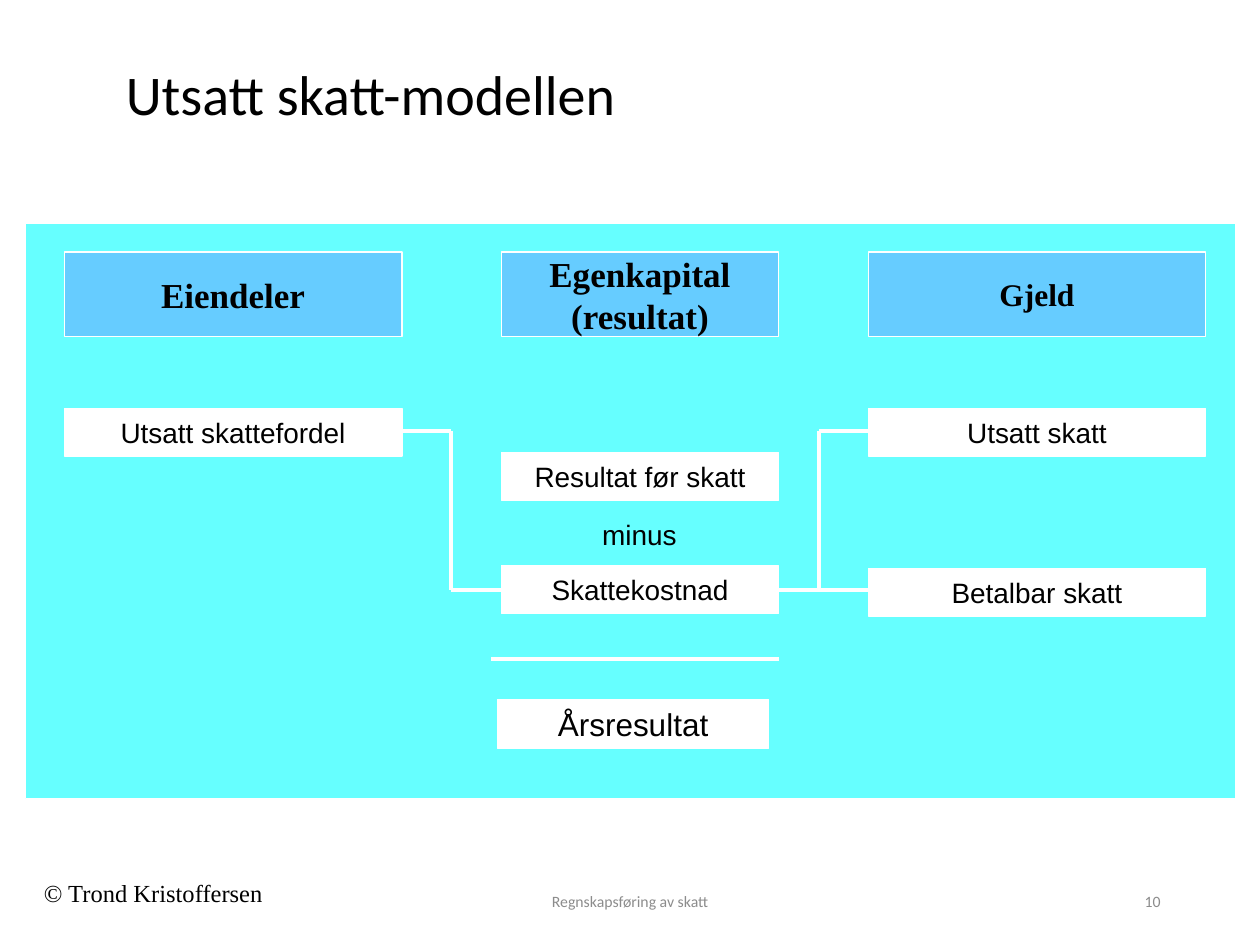
import pptx
import pptx.util
import pptx.dml.color
import pptx.enum.shapes
import pptx.enum.text
import pptx.oxml.ns
import lxml.etree

Inches = pptx.util.Inches
Align = pptx.enum.text.PP_ALIGN
Anchor = pptx.enum.text.MSO_ANCHOR


def paint(color, code):
    color.rgb = pptx.dml.color.RGBColor.from_string(code)


def write(shape, text, size, font, code="000000", align=Align.CENTER,
          anchor=Anchor.MIDDLE, bold=False, wrap=True):
    frame = shape.text_frame
    frame.word_wrap = wrap
    frame.vertical_anchor = anchor
    for i, line in enumerate(text.split("\n")):
        para = frame.add_paragraph() if i else frame.paragraphs[0]
        para.alignment = align
        run = para.add_run()
        run.text = line
        run.font.size = pptx.util.Pt(size)
        run.font.name = font
        run.font.bold = bold
        paint(run.font.color, code)


deck = pptx.Presentation()
deck.slide_width = Inches(10)
deck.slide_height = Inches(7.5)
slide = deck.slides.add_slide(deck.slide_layouts[6])
shapes = slide.shapes

serif, sans, body = "Times New Roman", "Arial", "Calibri"
black, gray, white = "000000", "8C8C8C", "FFFFFF"
cyan, blue = "66FFFF", "66CCFF"
left, mid, right = 0.51, 3.98, 6.89
wide, slim = 2.68, 2.2

labels = [
    ("© Trond Kristoffersen", 0.25, 6.92, 2.08, 0.33, 14, serif, black, Align.LEFT, Anchor.TOP),
    ("Utsatt skatt-modellen", 0.9, 0.31, 8.19, 0.93, 32, body, black, Align.LEFT, Anchor.MIDDLE),
    ("Regnskapsføring av skatt", 3.31, 6.95, 3.38, 0.4, 9, body, gray, Align.CENTER, Anchor.MIDDLE),
    ("10", 7.06, 6.95, 2.25, 0.4, 9, body, gray, Align.RIGHT, Anchor.MIDDLE),
]
boxes = [
    ("", 0.2, 1.77, 9.61, 4.57, cyan, 16, sans),
    ("Eiendeler", left, 2, wide, 0.67, blue, 20, serif),
    ("Egenkapital\n(resultat)", mid, 2, slim, 0.67, blue, 20, serif),
    ("Gjeld", right, 2, wide, 0.67, blue, 18, serif),
    ("Skattekostnad", mid, 4.49, slim, 0.38, white, 16, sans),
    ("Resultat før skatt", mid, 3.59, slim, 0.38, white, 16, sans),
    ("Årsresultat", 3.95, 5.55, 2.15, 0.39, white, 18, sans),
    ("Utsatt skattefordel", left, 3.24, wide, 0.38, white, 16, sans),
    ("Utsatt skatt", right, 3.24, wide, 0.38, white, 16, sans),
    ("Betalbar skatt", right, 4.51, wide, 0.38, white, 16, sans),
]
high, low = 3.42, 4.68
lines = [
    (3.9, 5.23, 6.18, 5.23),
    (3.58, low, mid, low),
    (left + wide, high, 3.58, high),
    (3.58, high, 3.58, low),
    (6.5, high, right, high),
    (mid + slim, low, right, low),
    (6.5, high, 6.5, low),
]

for text, x, y, w, h, size, font, code, align, anchor in labels:
    label = shapes.add_textbox(Inches(x), Inches(y), Inches(w), Inches(h))
    write(label, text, size, font, code, align, anchor)
    label.text_frame.paragraphs[0].line_spacing = 0.9 if size == 32 else 1

for text, x, y, w, h, fill, size, font in boxes:
    box = shapes.add_shape(pptx.enum.shapes.MSO_SHAPE.RECTANGLE,
                           Inches(x), Inches(y), Inches(w), Inches(h))
    box.shadow.inherit = False
    box.fill.solid()
    paint(box.fill.fore_color, fill)
    paint(box.line.color, white)
    box.line.width = pptx.util.Pt(0.75)
    if text:
        write(box, text, size, font, bold=font == serif, wrap=font == sans)

minus = shapes.add_textbox(Inches(4.68), Inches(4.06), Inches(0.79), Inches(0.37))
write(minus, "minus", 16, sans, align=Align.LEFT, anchor=Anchor.TOP, wrap=False)

for ends in lines:
    line = shapes.add_connector(pptx.enum.shapes.MSO_CONNECTOR.STRAIGHT,
                                *[Inches(end) for end in ends])
    paint(line.line.color, white)
    line.line.width = pptx.util.Pt(2.25)
    lxml.etree.SubElement(line._element.spPr, pptx.oxml.ns.qn("a:effectLst"))

deck.save("out.pptx")
